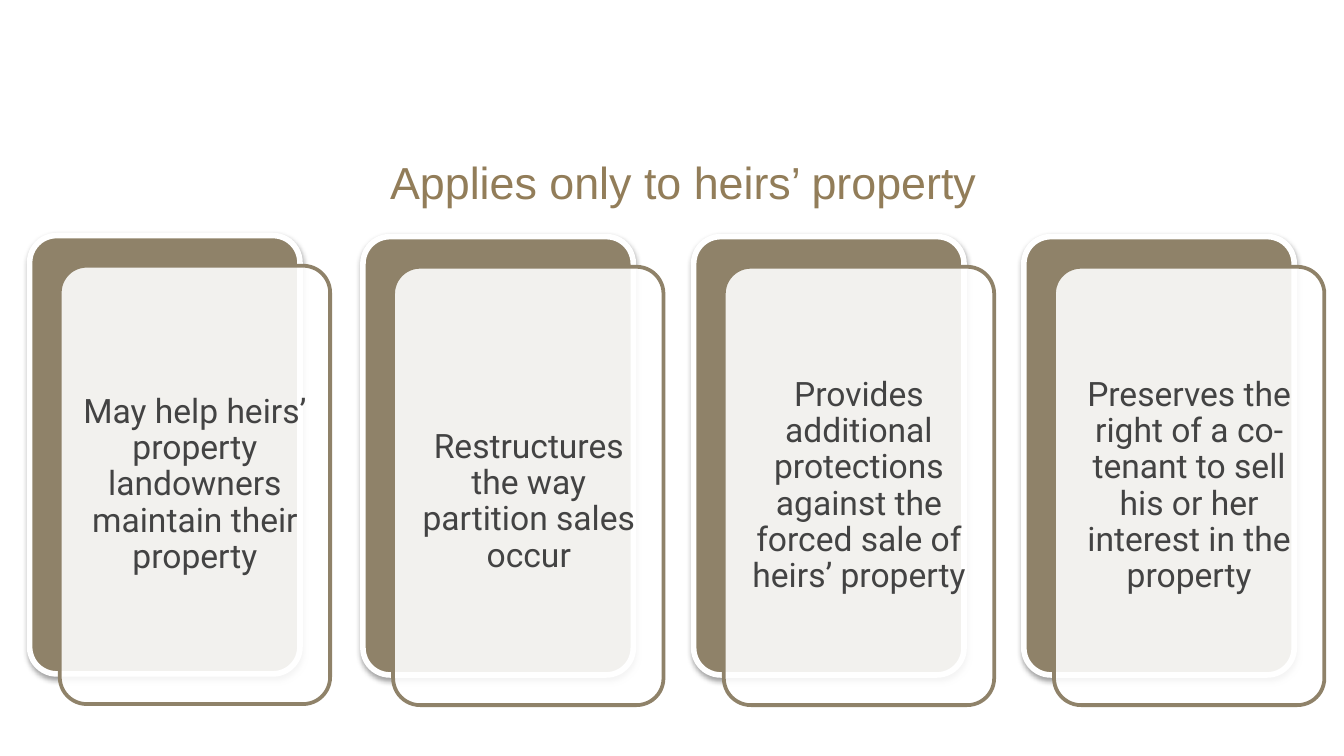
from lxml import etree
from pptx import Presentation
from pptx import util as u
from pptx.dml.color import RGBColor
from pptx.enum import shapes, text
from pptx.oxml import ns

# Content
TITLE = "Applies only to heirs’ property"
# Left and top of each back card in cm, its text, and whether the text has its own box
CARDS = [
    (0.56, 4.45, "May help heirs’ property landowners maintain their property", False),
    (6.86, 4.47, "Restructures the way partition sales occur", True),
    (13.11, 4.47, "Provides additional protections against the forced sale of heirs’ property", False),
    (19.35, 4.47, "Preserves the right of a co-tenant to sell his or her interest in the property", False),
]

# Format
TAUPE = RGBColor(0x8F, 0x82, 0x69)
BRONZE = RGBColor(0x92, 0x7D, 0x59)
DARK_GREY = RGBColor(0x43, 0x43, 0x43)
WHITE = RGBColor(0xFF, 0xFF, 0xFF)
TITLE_FONT = {"name": "Arial", "size": u.Pt(24)}
CARD_FONT = {"name": "Roboto", "size": u.Pt(18)}
CARD_WIDTH, CARD_HEIGHT, CARD_OFFSET = 5.11, 8.28, 0.57

presentation = Presentation()
presentation.slide_width, presentation.slide_height = u.Cm(25.4), u.Cm(14.28)
slide = presentation.slides.add_slide(presentation.slide_layouts[6])


def write(shape, words, font, color, spacing=None):
    shape.text_frame.word_wrap = True
    paragraph = shape.text_frame.paragraphs[0]
    paragraph.text = words
    paragraph.alignment = text.PP_ALIGN.CENTER
    paragraph.line_spacing = spacing
    for name, value in font.items():
        setattr(paragraph.font, name, value)
    paragraph.font.color.rgb = color


def add_text_box(left, top, width, height, *content):
    box = slide.shapes.add_textbox(*map(u.Cm, (left, top, width, height)))
    write(box, *content)


def add_card(left, top, fill, line, line_width):
    card = slide.shapes.add_shape(
        shapes.MSO_SHAPE.ROUNDED_RECTANGLE,
        *map(u.Cm, (left, top, CARD_WIDTH, CARD_HEIGHT)))
    card.adjustments[0] = 0.1
    card.shadow.inherit = False
    card.fill.solid()
    card.fill.fore_color.rgb = fill
    card.line.color.rgb = line
    card.line.width = u.Pt(line_width)
    return card


def add_shadow(shape):
    effects = shape._element.spPr.find(ns.qn("a:effectLst"))
    shadow = etree.SubElement(effects, ns.qn("a:outerShdw"), blurRad=str(u.Pt(3.1)),
                              dist=str(u.Pt(1.6)), dir="5400000", rotWithShape="0")
    color = etree.SubElement(shadow, ns.qn("a:srgbClr"), val="000000")
    etree.SubElement(color, ns.qn("a:alpha"), val="37000")


def set_opacity(shape, percent):
    color = shape._element.spPr.find(ns.qn("a:solidFill"))[0]
    etree.SubElement(color, ns.qn("a:alpha"), val=str(percent * 1000))


# Title
add_text_box(4.78, 2.79, 16.26, 1.27, TITLE, TITLE_FONT, BRONZE)

# Cards: solid back, translucent front
for left, top, words, own_box in CARDS:
    add_shadow(add_card(left, top, TAUPE, WHITE, 3))
    front_left, front_top = left + CARD_OFFSET, top + CARD_OFFSET
    front = add_card(front_left, front_top, WHITE, TAUPE, 2)
    set_opacity(front, 89)
    if own_box:
        add_text_box(front_left + 0.14, front_top + 2.94, 4.85, 2.34,
                     words, CARD_FONT, DARK_GREY, 0.9)
    else:
        frame = front.text_frame
        for side in ("left", "top", "right", "bottom"):
            setattr(frame, f"margin_{side}", u.Cm(0.17))
        frame.vertical_anchor = text.MSO_ANCHOR.MIDDLE
        write(front, words, CARD_FONT, DARK_GREY, 0.9)

presentation.save("out.pptx")
